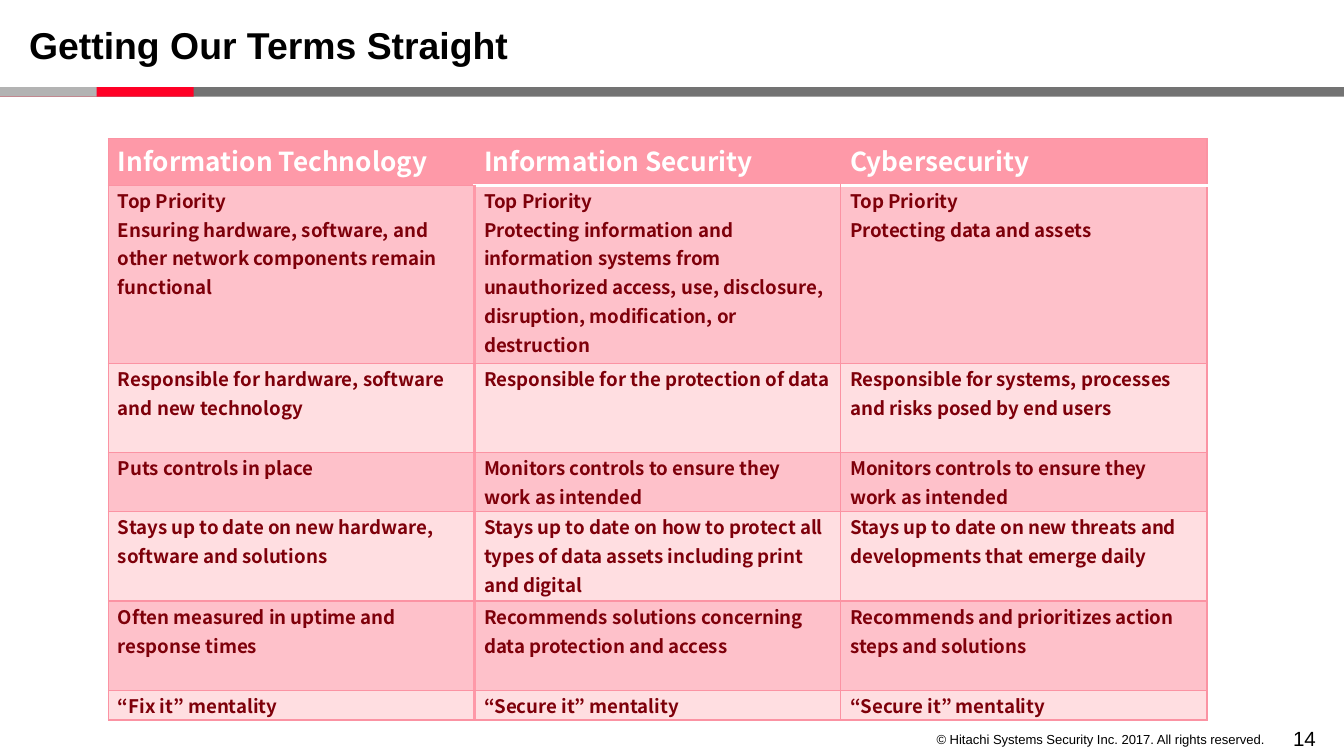
import pptx
import pptx.dml.color
import pptx.enum.shapes
import pptx.enum.text
import pptx.oxml.ns
import pptx.util
from lxml import etree

Cm = pptx.util.Cm
Pt = pptx.util.Pt
RGBColor = pptx.dml.color.RGBColor
MIDDLE = pptx.enum.text.MSO_ANCHOR.MIDDLE
TOP = pptx.enum.text.MSO_ANCHOR.TOP
LEFT = pptx.enum.text.PP_ALIGN.LEFT
RIGHT = pptx.enum.text.PP_ALIGN.RIGHT

BLACK = RGBColor(0x00, 0x00, 0x00)
WHITE = RGBColor(0xFF, 0xFF, 0xFF)
DARK_GRAY = RGBColor(0x73, 0x73, 0x73)
LIGHT_GRAY = RGBColor(0xB3, 0xB3, 0xB3)
RED = RGBColor(0xFF, 0x00, 0x26)
DARK_RED = RGBColor(0x7E, 0x00, 0x0A)
PINK = RGBColor(0xFE, 0x99, 0xA8)
PALE_PINK = RGBColor(0xFF, 0xDE, 0xE1)
BORDER_PINK = RGBColor(0xFB, 0x93, 0xA3)


def write_text(text_frame, text, size, color, font="Arial", bold=False, align=LEFT, spacing=0.9):
    """Fill a text frame, one paragraph for each line of text."""
    for index, line in enumerate(text.split("\n")):
        paragraph = text_frame.paragraphs[0] if index == 0 else text_frame.add_paragraph()
        paragraph.alignment = align
        paragraph.line_spacing = spacing
        run = paragraph.add_run()
        run.text = line
        run.font.name = font
        run.font.size = Pt(size)
        run.font.bold = bold
        run.font.color.rgb = color
        # The same face for East Asian characters, such as curly quotes
        east_asian = etree.SubElement(run._r.get_or_add_rPr(), pptx.oxml.ns.qn("a:ea"))
        east_asian.set("typeface", font)


def add_border(cell, side, color, width):
    """Draw one cell side (L, R, T or B); no colour means no line."""
    line = etree.SubElement(cell._tc.get_or_add_tcPr(), pptx.oxml.ns.qn(f"a:ln{side}"))
    line.set("w", str(Pt(width)))
    if color is None:
        etree.SubElement(line, pptx.oxml.ns.qn("a:noFill"))
    else:
        fill = etree.SubElement(line, pptx.oxml.ns.qn("a:solidFill"))
        etree.SubElement(fill, pptx.oxml.ns.qn("a:srgbClr")).set("val", str(color))


presentation = pptx.Presentation()
presentation.slide_width = Cm(25.4)
presentation.slide_height = Cm(14.29)
slide = presentation.slides.add_slide(presentation.slide_layouts[6])

# Three-part rule under the title
for width, color in [(25.4, DARK_GRAY), (3.66, RED), (1.83, LIGHT_GRAY)]:
    shape = slide.shapes.add_shape(
        pptx.enum.shapes.MSO_SHAPE.RECTANGLE, 0, Cm(1.65), Cm(width), Cm(0.18))
    shape.shadow.inherit = False
    shape.fill.solid()
    shape.fill.fore_color.rgb = color
    shape.line.fill.background()

# Title, copyright line and page number
labels = [
    ("Getting Our Terms Straight", 0.3, 0.38, 9.68, 1.02, 20, True, LEFT, MIDDLE, False),
    ("© Hitachi Systems Security Inc. 2017. All rights reserved.",
     17.32, 13.74, 6.83, 0.55, 7, False, RIGHT, TOP, False),
    ("14", 23.77, 13.67, 1.35, 0.64, 11, False, RIGHT, MIDDLE, True),
]
for text, left, top, width, height, size, bold, align, anchor, wrap in labels:
    text_box = slide.shapes.add_textbox(Cm(left), Cm(top), Cm(width), Cm(height))
    text_box.text_frame.word_wrap = wrap
    text_box.text_frame.vertical_anchor = anchor
    write_text(text_box.text_frame, text, size, BLACK, bold=bold, align=align)

# Comparison table
rows = [
    ["Information Technology", "Information Security", "Cybersecurity"],
    ["Top Priority\nEnsuring hardware, software, and other network components remain functional",
     "Top Priority\nProtecting information and information systems from unauthorized access, "
     "use, disclosure, disruption, modification, or destruction",
     "Top Priority\nProtecting data and assets"],
    ["Responsible for hardware, software and new technology",
     "Responsible for the protection of data",
     "Responsible for systems, processes and risks posed by end users"],
    ["Puts controls in place",
     "Monitors controls to ensure they work as intended",
     "Monitors controls to ensure they work as intended"],
    ["Stays up to date on new hardware, software and solutions",
     "Stays up to date on how to protect all types of data assets including print and digital",
     "Stays up to date on new threats and developments that emerge daily"],
    ["Often measured in uptime and response times",
     "Recommends solutions concerning data protection and access",
     "Recommends and prioritizes action steps and solutions"],
    ["“Fix it” mentality", "“Secure it” mentality", "“Secure it” mentality"],
]
row_heights = [0.88, 3.37, 1.68, 1.12, 1.69, 1.69, 0.56]
column_width = 6.92
table = slide.shapes.add_table(
    len(rows), 3, Cm(2.05), Cm(2.62), Cm(3 * column_width), Cm(sum(row_heights))).table
for column in table.columns:
    column.width = Cm(column_width)

thin = (BORDER_PINK, 0.75)
thick = (PINK, 2)
header_rule = (WHITE, 2)
no_line = (None, 0)
for row_index, row in enumerate(rows):
    table.rows[row_index].height = Cm(row_heights[row_index])
    is_header = row_index == 0
    for column_index, text in enumerate(row):
        cell = table.cell(row_index, column_index)
        cell.margin_left = cell.margin_right = Cm(0.18)
        cell.margin_top = cell.margin_bottom = 0
        write_text(cell.text_frame, text, 14 if is_header else 10,
                   WHITE if is_header else DARK_RED,
                   font="Noto Sans CJK JP", bold=True, spacing=1.07)

        # Vertical lines, left to right, then the rule under the header
        if is_header:
            verticals = [thin, no_line, no_line, thin]
        else:
            verticals = [thin, thick, thin, thin]
        under_header = thin if column_index == 0 else header_rule
        add_border(cell, "L", *verticals[column_index])
        add_border(cell, "R", *verticals[column_index + 1])
        add_border(cell, "T", *(under_header if row_index == 1 else thin))
        add_border(cell, "B", *(under_header if is_header else thin))

        # Odd body rows are a see-through pink, even ones are pale
        is_pale = not is_header and row_index % 2 == 0
        cell.fill.solid()
        cell.fill.fore_color.rgb = PALE_PINK if is_pale else PINK
        if row_index % 2 == 1:
            fill_color = cell._tc.tcPr.find(pptx.oxml.ns.qn("a:solidFill"))[0]
            etree.SubElement(fill_color, pptx.oxml.ns.qn("a:alpha")).set("val", "60000")

presentation.save("out.pptx")
